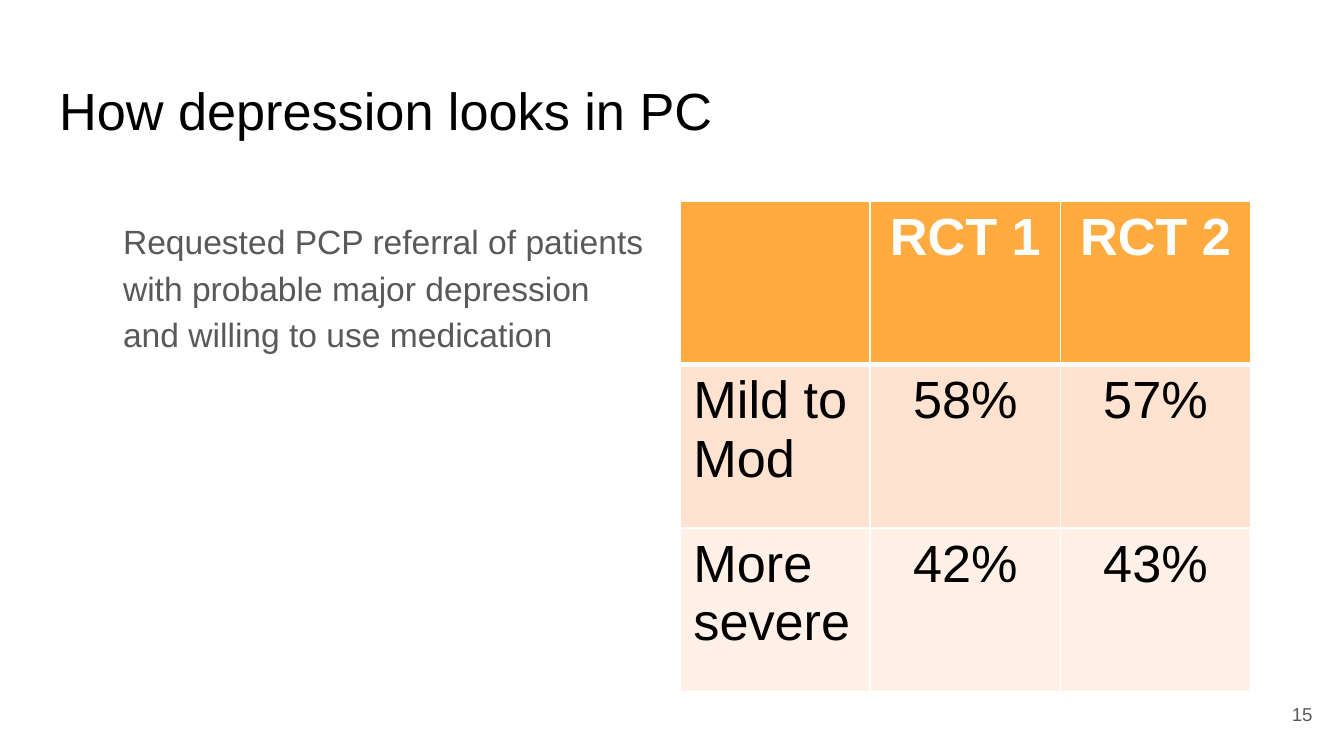
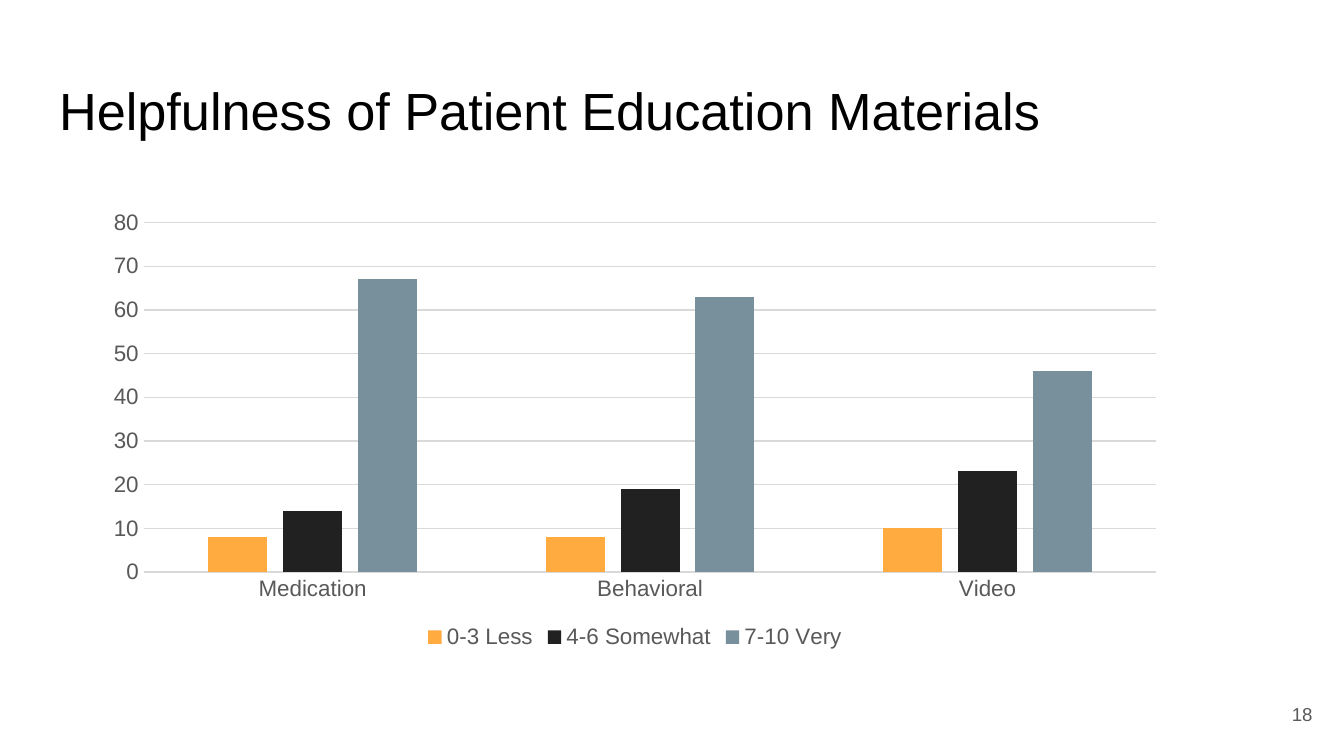
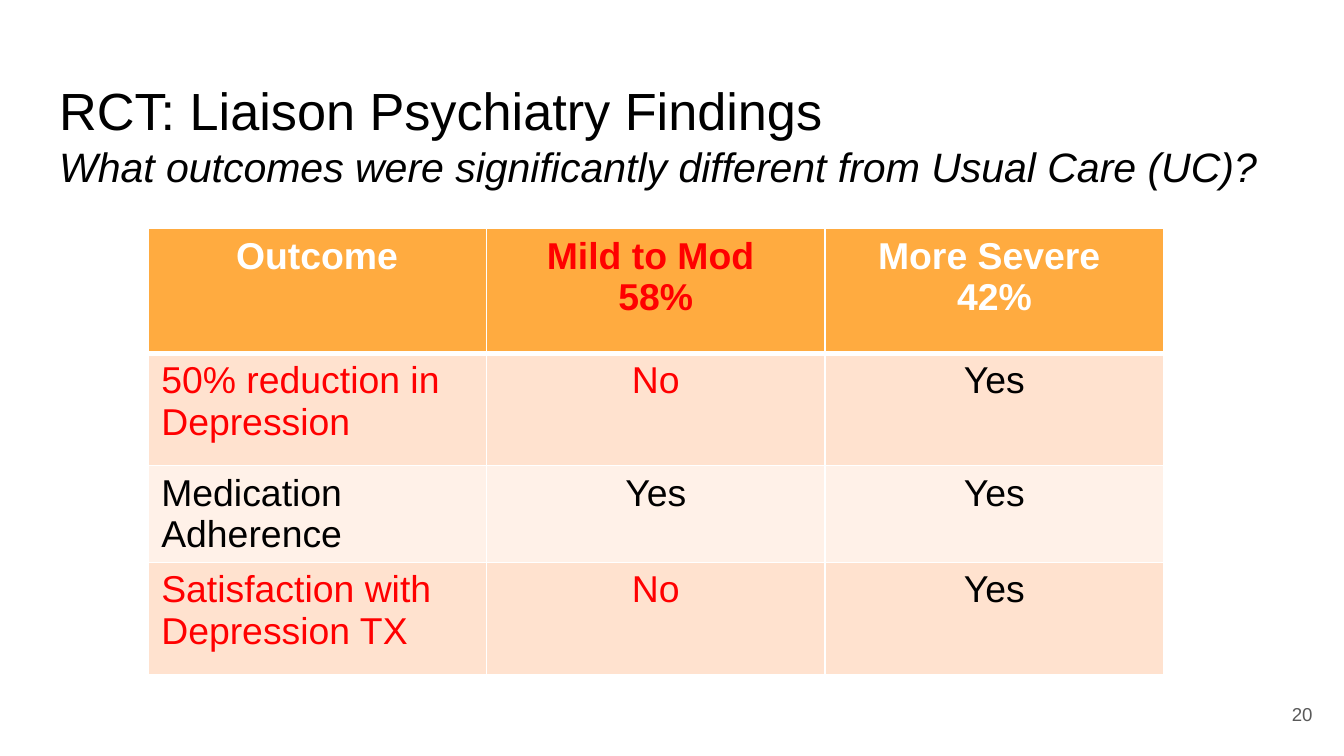
"""Build three slides on depression care in a primary care setting."""
from dataclasses import dataclass

from lxml import etree
from pptx import Presentation
from pptx import util as u
from pptx.chart import data as cd
from pptx.dml import color as dc
from pptx.enum import chart as ec
from pptx.enum import text as et
from pptx.oxml import ns

PX = 4572
FONT = "Arial"
BLACK, WHITE, RED, GRAY = "000000", "FFFFFF", "FF0000", "595959"
ORANGE, CHARCOAL, SLATE, GRID = "FFAB40", "212121", "78909C", "D9D9D9"
BANDS = ("FFE2CF", "FFF1E8")
TITLE_ONLY, TITLE_AND_BODY = 5, 1


@dataclass(frozen=True)
class Box:
    x: int
    y: int
    w: int
    h: int

    def emu(self) -> tuple:
        return tuple(px(v) for v in (self.x, self.y, self.w, self.h))


@dataclass(frozen=True)
class Cell:
    text: str
    color: str = BLACK


@dataclass(frozen=True)
class Series:
    name: str
    values: tuple
    color: str


TITLE_BOX = Box(68, 97, 1864, 125)
NUMBER_BOX = Box(1853, 1020, 120, 86)


def px(value: int) -> u.Emu:
    return u.Emu(value * PX)


def rgb(value: str) -> dc.RGBColor:
    return dc.RGBColor.from_string(value)


def style_font(font, size: int, color: str, bold: bool = False, italic: bool = False) -> None:
    font.name, font.size = FONT, u.Pt(size)
    font.bold, font.italic = bold, italic
    font.color.rgb = rgb(color)


def add_text(p, content: str, *, size: int, color: str = BLACK, bold: bool = False,
             italic: bool = False, align=et.PP_ALIGN.LEFT) -> None:
    p.alignment = align
    r = p.add_run()
    r.text = content
    style_font(r.font, size, color, bold, italic)


def prepare_frame(s, box: Box, anchor=et.MSO_ANCHOR.TOP):
    s.left, s.top, s.width, s.height = box.emu()
    tf = s.text_frame
    tf.word_wrap, tf.auto_size = True, et.MSO_AUTO_SIZE.NONE
    tf.vertical_anchor = anchor
    tf.margin_left = tf.margin_right = tf.margin_top = tf.margin_bottom = px(20)
    return tf


def add_slide(prs, layout: int, title: str, number: int, subtitle: str = ""):
    sp = prs.slides.add_slide(prs.slide_layouts[layout])
    p = prepare_frame(sp.shapes.title, TITLE_BOX).paragraphs[0]
    add_text(p, title, size=28)
    if subtitle:
        p.add_line_break()
        add_text(p, subtitle, size=22, italic=True)
    tf = prepare_frame(sp.shapes.add_textbox(*NUMBER_BOX.emu()), NUMBER_BOX, et.MSO_ANCHOR.MIDDLE)
    add_text(tf.paragraphs[0], str(number), size=10, color=GRAY, align=et.PP_ALIGN.RIGHT)
    return sp


def add_body(sp, content: str, box: Box) -> None:
    p = prepare_frame(sp.placeholders[1], box).paragraphs[0]
    add_text(p, content, size=18, color=GRAY)
    p.line_spacing, p.space_before = 1.15, u.Pt(0)
    pr = p._p.get_or_add_pPr()
    pr.set("marL", str(px(25)))
    pr.set("indent", "0")
    etree.SubElement(pr, ns.qn("a:buNone"))


def add_borders(cell, top: int, bottom: int) -> None:
    for side, width in (("L", 1), ("R", 1), ("T", top), ("B", bottom)):
        ln = etree.SubElement(cell._tc.get_or_add_tcPr(), ns.qn(f"a:ln{side}"), w=str(u.Pt(width)))
        fill = etree.SubElement(ln, ns.qn("a:solidFill"))
        etree.SubElement(fill, ns.qn("a:srgbClr"), val=WHITE)


def add_table(sp, x: int, y: int, col_width: int, row_heights: list[int],
              rows: list[list[Cell]], size: int) -> None:
    box = Box(x, y, col_width * len(rows[0]), sum(row_heights))
    table = sp.shapes.add_table(len(rows), len(rows[0]), *box.emu()).table
    table.horz_banding = False
    for col in table.columns:
        col.width = px(col_width)
    for i, (row, height) in enumerate(zip(rows, row_heights)):
        table.rows[i].height = px(height)
        header = i == 0
        for j, item in enumerate(row):
            cell = table.cell(i, j)
            add_borders(cell, top=3 if i == 1 else 1, bottom=3 if header else 1)
            cell.fill.solid()
            cell.fill.fore_color.rgb = rgb(ORANGE if header else BANDS[(i - 1) % 2])
            align = et.PP_ALIGN.CENTER if header or j else et.PP_ALIGN.LEFT
            tf = cell.text_frame
            for k, line in enumerate(item.text.splitlines()):
                p = tf.add_paragraph() if k else tf.paragraphs[0]
                add_text(p, line, size=size, color=item.color, bold=header, align=align)


def style_line(line, color: str) -> None:
    line.color.rgb = rgb(color)
    line.width = u.Pt(0.75)


def add_column_chart(sp, box: Box, categories: list[str], series: list[Series]) -> None:
    data = cd.CategoryChartData()
    data.categories = categories
    for item in series:
        data.add_series(item.name, item.values)
    chart = sp.shapes.add_chart(ec.XL_CHART_TYPE.COLUMN_CLUSTERED, *box.emu(), data).chart
    chart.has_title = False
    style_font(chart.font, 10, BLACK)
    plot = chart.plots[0]
    plot.gap_width, plot.overlap, plot.vary_by_categories = 219, -27, False
    for bars, item in zip(plot.series, series):
        bars.format.fill.solid()
        bars.format.fill.fore_color.rgb = rgb(item.color)
    for axis in (chart.category_axis, chart.value_axis):
        axis.major_tick_mark = axis.minor_tick_mark = ec.XL_TICK_MARK.NONE
        style_font(axis.tick_labels.font, 12, GRAY)
    style_line(chart.category_axis.format.line, GRID)
    values = chart.value_axis
    values.minimum_scale, values.maximum_scale, values.major_unit = 0, 80, 10
    values.format.line.fill.background()
    style_line(values.major_gridlines.format.line, GRID)
    chart.has_legend = True
    chart.legend.position = ec.XL_LEGEND_POSITION.BOTTOM
    chart.legend.include_in_layout = False
    style_font(chart.legend.font, 12, GRAY)


def add_severity_slide(prs) -> None:
    sp = add_slide(prs, TITLE_AND_BODY, "How depression looks in PC", 15)
    add_body(sp, "Requested PCP referral of patients with probable major depression "
                 "and willing to use medication", Box(138, 300, 850, 714))
    add_table(sp, 1012, 300, 283, [243] * 3, [
        [Cell(""), Cell("RCT 1", WHITE), Cell("RCT 2", WHITE)],
        [Cell("Mild to Mod"), Cell("58%"), Cell("57%")],
        [Cell("More severe"), Cell("42%"), Cell("43%")],
    ], size=28)


def add_helpfulness_slide(prs) -> None:
    sp = add_slide(prs, TITLE_ONLY, "Helpfulness of Patient Education Materials", 18)
    add_column_chart(sp, Box(137, 300, 1616, 674), ["Medication", "Behavioral", "Video"], [
        Series("0-3 Less", (8, 8, 10), ORANGE),
        Series("4-6 Somewhat", (14, 19, 23), CHARCOAL),
        Series("7-10 Very", (67, 63, 46), SLATE),
    ])


def add_findings_slide(prs) -> None:
    sp = add_slide(prs, TITLE_ONLY, "RCT: Liaison Psychiatry Findings", 20,
                   "What outcomes were significantly different from Usual Care (UC)?")
    add_table(sp, 220, 340, 504, [186, 167, 120, 167], [
        [Cell("Outcome", WHITE), Cell("Mild to Mod \n58%", RED), Cell("More Severe \n42%", WHITE)],
        [Cell("50% reduction in Depression", RED), Cell("No", RED), Cell("Yes")],
        [Cell("Medication Adherence"), Cell("Yes"), Cell("Yes")],
        [Cell("Satisfaction with Depression TX", RED), Cell("No", RED), Cell("Yes")],
    ], size=20)


def main() -> None:
    prs = Presentation()
    prs.slide_width, prs.slide_height = px(2000), px(1125)
    add_severity_slide(prs)
    add_helpfulness_slide(prs)
    add_findings_slide(prs)
    prs.save("out.pptx")


if __name__ == "__main__":
    main()
